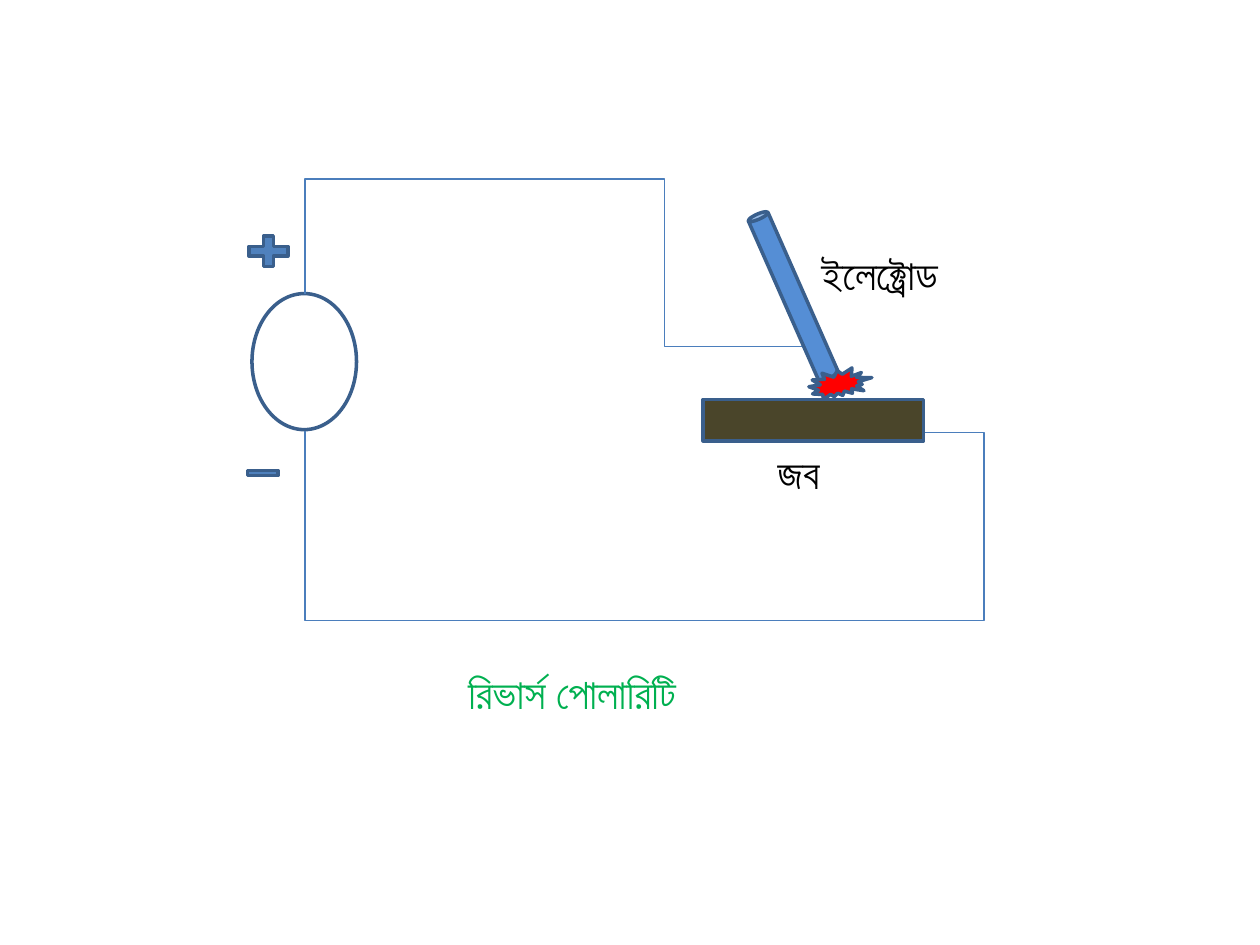
from pptx import Presentation
from pptx.dml.color import RGBColor
from pptx.enum import shapes, text
from pptx.oxml.ns import qn
from pptx.util import Inches, Pt

WHITE = RGBColor(0xFF, 0xFF, 0xFF)
BLACK = RGBColor(0x00, 0x00, 0x00)
GREEN = RGBColor(0x00, 0xB0, 0x50)
RED = RGBColor(0xFF, 0x00, 0x00)
BLUE = RGBColor(0x4F, 0x81, 0xBD)
ROD_BLUE = RGBColor(0x55, 0x8E, 0xD5)
JOB_BROWN = RGBColor(0x4A, 0x45, 0x2A)
OUTLINE = RGBColor(0x3A, 0x5F, 0x8C)
WIRE = RGBColor(0x4B, 0x7E, 0xBC)
FONT = "Lato"
KIND = shapes.MSO_SHAPE


def add_part(slide, kind, left, top, width, height, fill=None, rotation=0):
    """Draw one outlined part of the circuit, hollow when it has no fill."""
    part = slide.shapes.add_shape(
        kind, Inches(left), Inches(top), Inches(width), Inches(height))
    part.shadow.inherit = False
    part.rotation = rotation
    if fill is None:
        part.fill.background()
    else:
        part.fill.solid()
        part.fill.fore_color.rgb = fill
    part.line.color.rgb = OUTLINE
    part.line.width = Pt(2)


def add_wire(slide, left, top, width, height, lane, turn):
    """Bend a wire from top left to bottom right by way of lane (y) and turn (x)."""
    middle_x, middle_y = left + width / 2, top + height / 2
    wire = slide.shapes.add_connector(
        shapes.MSO_CONNECTOR.ELBOW,
        Inches(middle_x - height / 2), Inches(middle_y - width / 2),
        Inches(middle_x + height / 2), Inches(middle_y + width / 2))
    wire.line.color.rgb = WIRE
    wire.line.width = Pt(0.75)
    properties = wire._element.spPr
    properties.append(properties.makeelement(qn("a:effectLst"), {}))
    frame = properties.find(qn("a:xfrm"))
    frame.set("rot", str(270 * 60000))
    frame.set("flipH", "1")
    bend = properties.find(qn("a:prstGeom"))
    bend.set("prst", "bentConnector4")
    guides = bend.find(qn("a:avLst"))
    shares = {"adj1": (lane - top) / height, "adj2": (turn - left) / width}
    for name, share in shares.items():
        formula = f"val {round(share * 100000)}"
        guides.append(guides.makeelement(
            qn("a:gd"), {"name": name, "fmla": formula}))


def add_label(slide, wording, left, top, width, color=BLACK,
              align=text.PP_ALIGN.CENTER):
    """Write a one-line label."""
    label = slide.shapes.add_textbox(
        Inches(left), Inches(top), Inches(width), Inches(0.5))
    label.text_frame.word_wrap = True
    label.text_frame.auto_size = text.MSO_AUTO_SIZE.SHAPE_TO_FIT_TEXT
    line = label.text_frame.paragraphs[0]
    line.alignment = align
    run = line.add_run()
    run.text = wording
    run.font.name = FONT
    run.font.size = Pt(24)
    run.font.color.rgb = color


def add_circuit(slide, left, top, width, height):
    """Wire the source to the electrode above and to the job below."""
    source_top, source_bottom = top + 0.91, top + 2
    add_part(slide, KIND.OVAL, left - 0.42, source_top, 0.83, 1.08)
    add_wire(slide, left, source_top, 4, 0.42, top, left + 2.85)
    add_wire(slide, left, source_bottom, 4.83, 0.01,
             top + height, left + width)


def add_poles(slide, left, top):
    """Mark the positive pole above the source and the negative one below."""
    add_part(slide, KIND.MATH_MINUS, left, top + 1.84, 0.33, 0.17, BLUE)
    add_part(slide, KIND.MATH_PLUS, left, top, 0.42, 0.33, BLUE)


def add_weld(slide, left, top):
    """Place the electrode and its arc on the job, with their labels."""
    add_part(slide, KIND.RECTANGLE, left, top + 1.53, 1.75, 0.33, JOB_BROWN)
    add_part(slide, KIND.CAN, left + 0.63, top, 0.17, 1.42, ROD_BLUE, 336.2)
    add_part(slide, KIND.EXPLOSION2, left + 0.84, top + 1.28, 0.5, 0.25, RED)
    add_label(slide, "জব ", left + 0.34, top + 1.86, 0.92)
    add_label(slide, "ইলেক্ট্রোড", left + 0.84, top + 0.28, 1.58,
              align=text.PP_ALIGN.LEFT)


def main():
    """Build the reverse polarity slide."""
    deck = Presentation()
    deck.slide_width, deck.slide_height = Inches(10), Inches(7.5)
    slide = deck.slides.add_slide(deck.slide_layouts[6])
    slide.background.fill.solid()
    slide.background.fill.fore_color.rgb = WHITE
    add_circuit(slide, 2.42, 1.42, 5.39, 3.53)
    add_poles(slide, 1.92, 1.83)
    add_weld(slide, 5.58, 1.64)
    add_label(slide, "রিভার্স পোলারিটি", 3.25, 5.25, 2.58, GREEN)
    deck.save("out.pptx")


if __name__ == "__main__":
    main()
